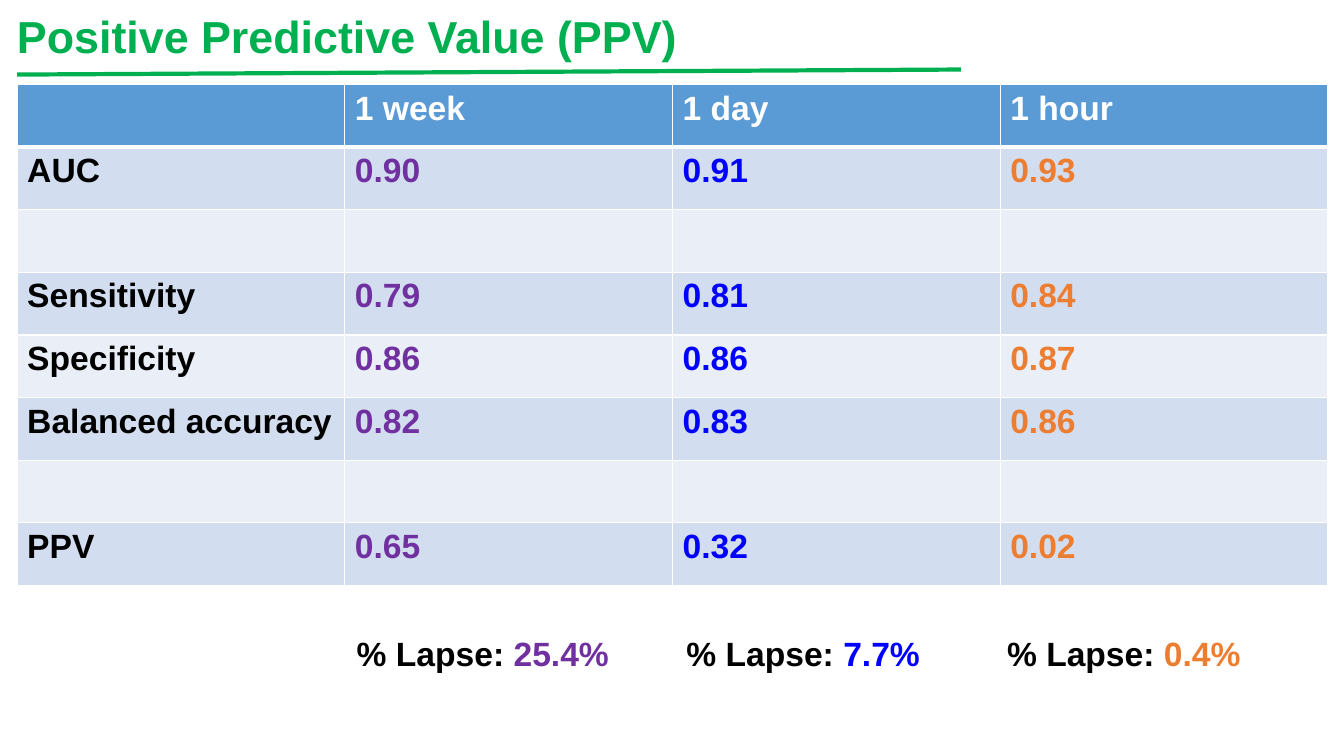
from lxml import etree
from pptx import Presentation, util as u
from pptx.dml.color import RGBColor
from pptx.enum import shapes, text
from pptx.oxml.ns import qn

GREEN, BLACK, WHITE = "00B050", "000000", "FFFFFF"
HEADER_FILL, ODD_FILL, EVEN_FILL = "5B9BD5", "D2DEEF", "EAEFF7"
COLUMN_COLORS = [BLACK, "7030A0", "0000FF", "ED7D31"]

METRICS = [
    ["", "1 week", "1 day", "1 hour"],
    ["AUC", "0.90", "0.91", "0.93"],
    [""] * 4,
    ["Sensitivity", "0.79", "0.81", "0.84"],
    ["Specificity", "0.86", "0.86", "0.87"],
    ["Balanced accuracy", "0.82", "0.83", "0.86"],
    [""] * 4,
    ["PPV", "0.65", "0.32", "0.02"],
]
LAPSES = [(3.44, 2.73, "25.4%"), (6.71, 2.54, "7.7%"), (9.89, 2.54, "0.4%")]


def color(hex_value):
    return RGBColor.from_string(hex_value)


class SlideBuilder:
    font = {"name": "Arial", "bold": True}

    def __init__(self, slide):
        self.slide = slide

    def add_span(self, para, content, size, hex_value):
        span = para.add_run()
        span.text = content
        for name, value in {**self.font, "size": u.Pt(size)}.items():
            setattr(span.font, name, value)
        span.font.color.rgb = color(hex_value)

    def text_box(self, place, spans, size, wrap):
        """Add one line of text from (content, colour) pairs."""
        box = self.slide.shapes.add_textbox(*map(u.Inches, place))
        frame = box.text_frame
        frame.word_wrap = wrap
        frame.auto_size = text.MSO_AUTO_SIZE.SHAPE_TO_FIT_TEXT
        for content, hex_value in spans:
            self.add_span(frame.paragraphs[0], content, size, hex_value)

    def line(self, start, end, hex_value, width):
        points = map(u.Inches, (*start, *end))
        line = self.slide.shapes.add_connector(shapes.MSO_CONNECTOR.STRAIGHT, *points)
        line.line.color.rgb = color(hex_value)
        line.line.width = u.Pt(width)
        etree.SubElement(line._element.spPr, qn("a:effectLst"))

    def borders(self, cell, widths):
        """Draw white cell borders; widths maps each side to points."""
        properties = cell._tc.get_or_add_tcPr()
        for side, width in widths.items():
            edge = etree.SubElement(properties, qn(f"a:ln{side}"), w=str(u.Pt(width)))
            fill = etree.SubElement(edge, qn("a:solidFill"))
            etree.SubElement(fill, qn("a:srgbClr"), val=WHITE)

    def table(self, place, rows):
        frame = self.slide.shapes.add_table(len(rows), len(rows[0]), *map(u.Inches, place))
        for r, row in enumerate(rows):
            fill = HEADER_FILL if r == 0 else ODD_FILL if r % 2 else EVEN_FILL
            for c, content in enumerate(row):
                cell = frame.table.cell(r, c)
                self.borders(cell, {"L": 1, "R": 1, "T": 3 if r == 1 else 1,
                                    "B": 3 if r == 0 else 1})
                cell.fill.solid()
                cell.fill.fore_color.rgb = color(fill)
                if content:
                    hex_value = COLUMN_COLORS[c] if r else WHITE
                    self.add_span(cell.text_frame.paragraphs[0], content, 24, hex_value)


def main():
    deck = Presentation()
    deck.slide_width, deck.slide_height = u.Inches(13.33), u.Inches(7.5)
    page = SlideBuilder(deck.slides.add_slide(deck.slide_layouts[6]))

    page.table((0.17, 0.84, 13, 4.97), METRICS)
    page.line((0.17, 0.74), (9.53, 0.69), GREEN, 3)
    page.text_box((0.07, 0.04, 13, 0.64),
                  [("Positive Predictive Value (PPV)", GREEN)], 32, True)
    for (left, width, rate), hex_value in zip(LAPSES, COLUMN_COLORS[1:]):
        page.text_box((left, 6.23, width, 0.5),
                      [("% Lapse: ", BLACK), (rate, hex_value)], 24, False)
    deck.save("out.pptx")


if __name__ == "__main__":
    main()
